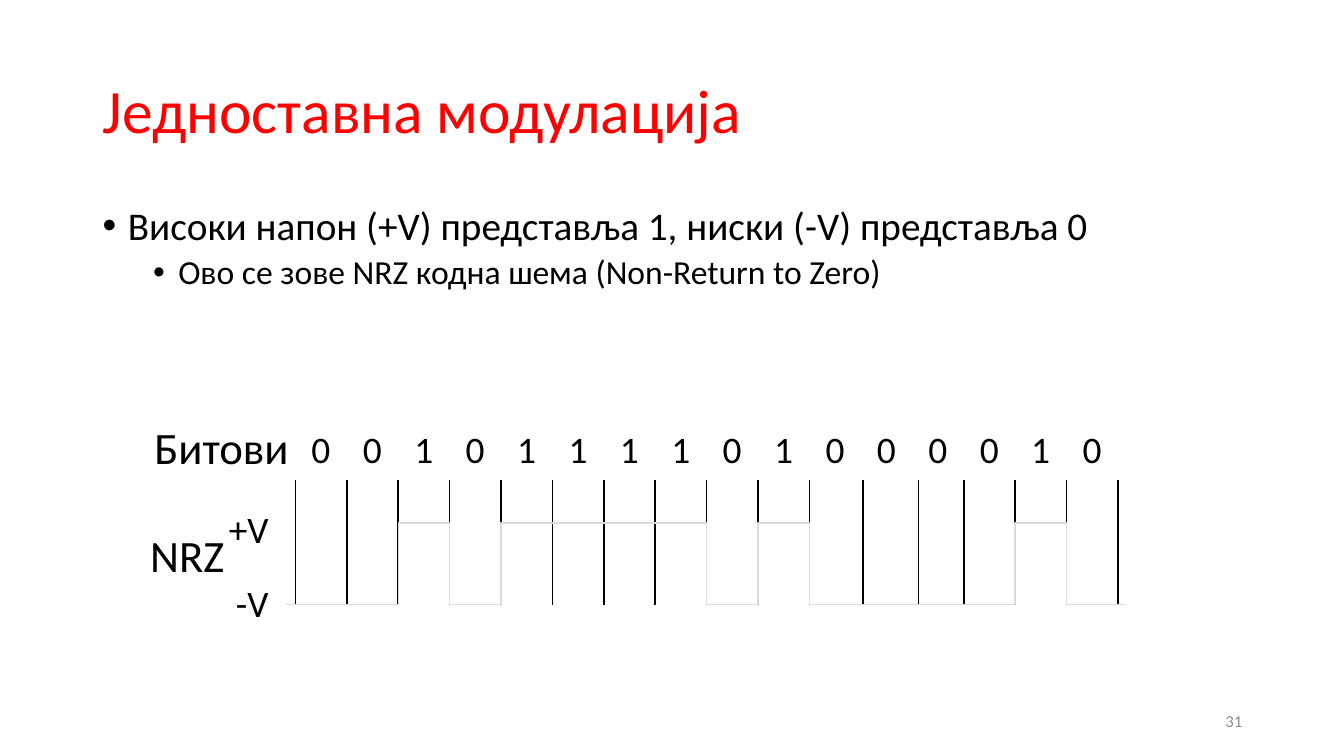
from lxml import etree
from pptx import Presentation
from pptx import util as u
from pptx.dml.color import RGBColor
from pptx.enum import shapes, text
from pptx.oxml.ns import qn

# All positions are percentages of the slide's width and height
WIDTH, HEIGHT = u.Inches(13.33), u.Inches(7.5)
BITS = "0010111101000010"
BITS_LEFT, BIT_STEP = 21.98, 61.2 / len(BITS)
DIGIT_WIDTH = 1.43
TICK_TOP, HIGH, LOW = 63.47, 69.2, 80
WAVE_LEFT, WAVE_RIGHT = 21.3, 83.8
TICK_SHIFT = {11: 0.15, 12: 0.45}  # two ticks stand off the grid


def across(share):
    return round(WIDTH * share / 100)


def down(share):
    return round(HEIGHT * share / 100)


def bit_edge(index):
    return BITS_LEFT + index * BIT_STEP


def color(hex_code):
    return RGBColor.from_string(hex_code)


def write(paragraph, words, size, ink="000000", align=text.PP_ALIGN.LEFT):
    run = paragraph.add_run()
    run.text = words
    run.font.name = "Calibri"
    run.font.size = u.Pt(size)
    run.font.color.rgb = color(ink)
    paragraph.alignment = align


def add_frame(slide, left, top, width, height, anchor=text.MSO_ANCHOR.TOP):
    box = slide.shapes.add_textbox(across(left), down(top), across(width), down(height))
    frame = box.text_frame
    frame.word_wrap = True
    frame.vertical_anchor = anchor
    return frame


def add_label(slide, words, left, top, width, height, size):
    frame = add_frame(slide, left, top, width, height)
    frame.word_wrap = False
    frame.margin_left = frame.margin_right = frame.margin_top = frame.margin_bottom = 0
    write(frame.paragraphs[0], words, size)


def add_bullet(paragraph, words, size, indent, space_before):
    write(paragraph, words, size)
    paragraph.line_spacing = 0.9
    paragraph.space_before = u.Pt(space_before)
    properties = paragraph._p.get_or_add_pPr()
    properties.set("marL", str(u.Inches(indent)))
    properties.set("indent", str(u.Inches(-0.25)))
    etree.SubElement(properties, qn("a:buFont")).set("typeface", "Arial")
    etree.SubElement(properties, qn("a:buChar")).set("char", "•")


def add_tick(slide, index):
    x = across(bit_edge(index) + TICK_SHIFT.get(index, 0))
    tick = slide.shapes.add_connector(
        shapes.MSO_CONNECTOR.STRAIGHT, x, down(TICK_TOP), x, down(LOW))
    tick.line.color.rgb = color("000000")
    tick.line.width = u.Pt(1.13)
    etree.SubElement(tick._element.spPr, qn("a:effectLst"))


def add_wave(slide):
    levels = [HIGH if bit == "1" else LOW for bit in BITS]
    points = []
    for index in range(1, len(levels)):
        before, after = levels[index - 1], levels[index]
        if before != after:
            points += [(bit_edge(index), before), (bit_edge(index), after)]
    points.append((WAVE_RIGHT, levels[-1]))
    builder = slide.shapes.build_freeform(across(WAVE_LEFT), down(levels[0]))
    builder.add_line_segments([(across(x), down(y)) for x, y in points], close=False)
    wave = builder.convert_to_shape()
    wave.shadow.inherit = False
    wave.fill.background()
    wave.line.color.rgb = color("DBDBDB")
    wave.line.width = u.Pt(1)


def main():
    deck = Presentation()
    deck.slide_width, deck.slide_height = WIDTH, HEIGHT
    slide = deck.slides.add_slide(deck.slide_layouts[6])

    # Title and explanation
    title = add_frame(slide, 6.9, 5.33, 86.25, 19.33, text.MSO_ANCHOR.MIDDLE).paragraphs[0]
    write(title, "Једноставна модулација", 44, ink="FF0000")
    title.line_spacing = 0.9
    body = add_frame(slide, 6.9, 26.67, 86.25, 63.47)
    add_bullet(body.paragraphs[0],
               "Високи напон (+V) представља 1, ниски (-V) представља 0", 28, 0.25, 10)
    add_bullet(body.add_paragraph(),
               "Ово се зове NRZ кодна шема (Non-Return to Zero)", 24, 0.75, 5)

    # Row names and voltage levels
    add_label(slide, "Битови", 11.48, 55.47, 10.13, 7.2, 32)
    add_label(slide, "NRZ", 11.18, 69.87, 5.55, 7.2, 32)
    add_label(slide, "+V", 17.03, 66.93, 3, 6, 26.7)
    add_label(slide, "-V", 17.55, 76.67, 2.48, 6, 26.7)

    # Bits, ticks and signal
    for index, bit in enumerate(BITS):
        left = bit_edge(index + 0.5) - DIGIT_WIDTH / 2
        add_label(slide, bit, left, 56.4, DIGIT_WIDTH, 6, 26.7)
    for index in range(len(BITS) + 1):
        add_tick(slide, index)
    add_wave(slide)

    # Slide number
    number = add_frame(slide, 70.67, 92.67, 22.5, 5.33, text.MSO_ANCHOR.MIDDLE)
    write(number.paragraphs[0], "31", 12, ink="8C8C8C", align=text.PP_ALIGN.RIGHT)

    deck.save("out.pptx")


if __name__ == "__main__":
    main()
